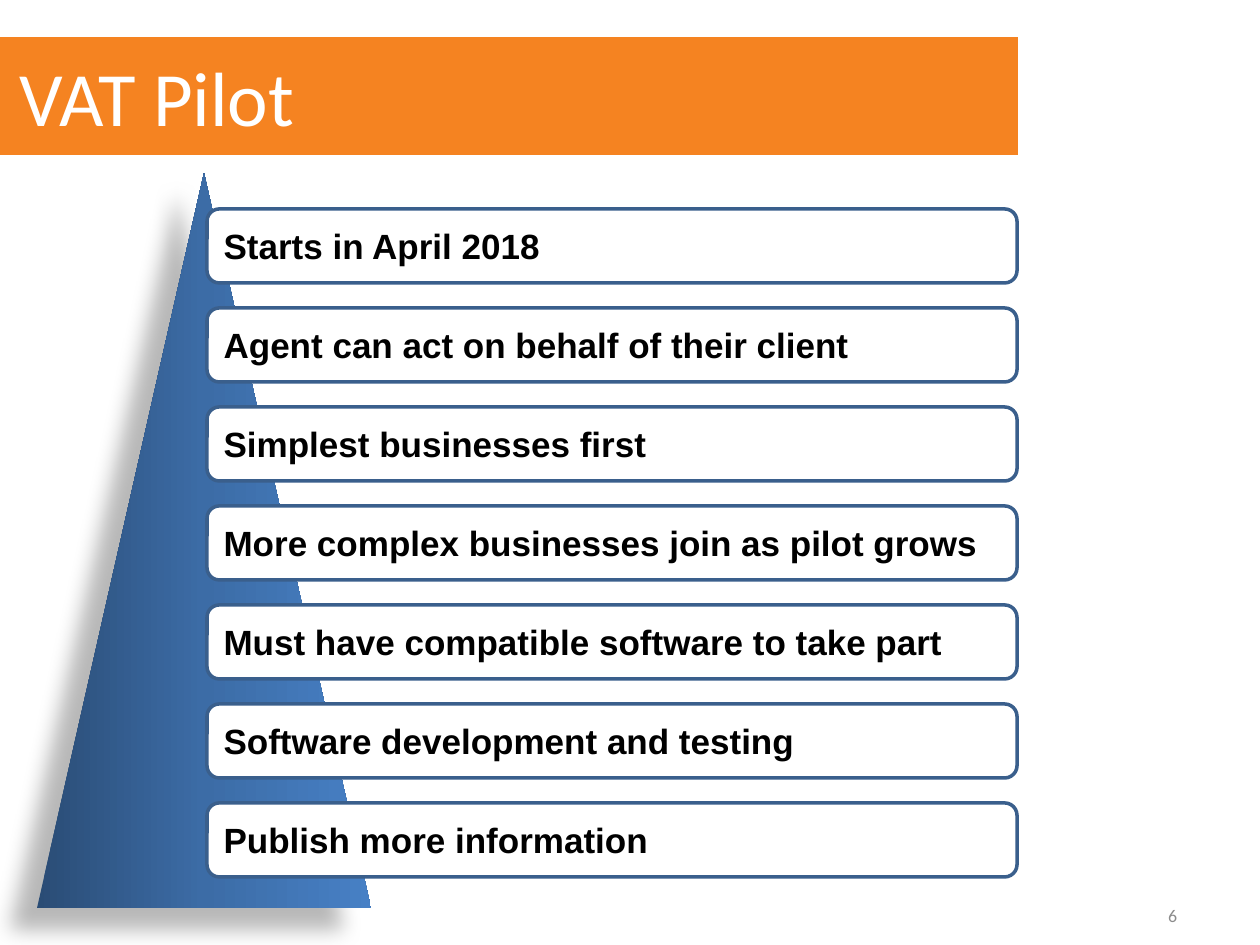
from pptx import Presentation
from pptx.dml.color import RGBColor
from pptx.enum.shapes import MSO_SHAPE
from pptx.enum.text import MSO_ANCHOR, PP_ALIGN
from pptx.oxml import parse_xml
from pptx.oxml.ns import nsdecls
from pptx.util import Emu, Pt

TRIANGLE, ROUNDED = MSO_SHAPE.ISOSCELES_TRIANGLE, MSO_SHAPE.ROUNDED_RECTANGLE
MIDDLE = MSO_ANCHOR.MIDDLE
LEFT, RIGHT = PP_ALIGN.LEFT, PP_ALIGN.RIGHT

ORANGE = RGBColor(0xF5, 0x83, 0x21)
WHITE = RGBColor(0xFF, 0xFF, 0xFF)
BLACK = RGBColor(0, 0, 0)
GREY = RGBColor(0x8C, 0x8C, 0x8C)
OUTLINE = RGBColor(0x3A, 0x5F, 0x8C)
GRADIENT = [
    (0, RGBColor(0x2A, 0x4C, 0x75)),
    (50, RGBColor(0x3C, 0x6C, 0xA6)),
    (100, RGBColor(0x47, 0x80, 0xC5)),
]

TITLE_FONT = {"name": "Calibri", "size": Pt(43.9), "bold": False}
POINT_FONT = {"name": "Arial", "size": Pt(20), "bold": True}
NUMBER_FONT = {"name": "Calibri", "size": Pt(10.2)}
WIDE_INSETS = (20, 10, 20, 10)
POINT_INSETS = (13, 6, 13, 6)

POINTS = [
    "Starts in April 2018",
    "Agent can act on behalf of their client",
    "Simplest businesses first",
    "More complex businesses join as pilot grows",
    "Must have compatible software to take part",
    "Software development and testing",
    "Publish more information",
]
POINT_TOP, POINT_PITCH = 209, 99


def px(n):
    return Emu(round(n * 914400 / 126))


def box(*lengths):
    return [px(n) for n in lengths]


def write(sp, text, font, color, align, insets):
    tf = sp.text_frame
    frame = dict(zip(("margin_left", "margin_top", "margin_right", "margin_bottom"), box(*insets)))
    frame.update(word_wrap=True, vertical_anchor=MIDDLE)
    for key, value in frame.items():
        setattr(tf, key, value)
    p = tf.paragraphs[0]
    p.alignment = align
    r = p.add_run()
    r.text = text
    for key, value in font.items():
        setattr(r.font, key, value)
    r.font.color.rgb = color


def add_title(s, text):
    sp = s.shapes.title
    sp.left, sp.top, sp.width, sp.height = box(0, 37, 1018, 118)
    sp.fill.solid()
    sp.fill.fore_color.rgb = ORANGE
    write(sp, text, TITLE_FONT, WHITE, LEFT, WIDE_INSETS)


def add_pyramid(s):
    sp = s.shapes.add_shape(TRIANGLE, *box(37, 173, 334, 735))
    stops = "".join(
        f'<a:gs pos="{pos * 1000}"><a:srgbClr val="{color}"/></a:gs>' for pos, color in GRADIENT
    )
    sp_pr = sp._element.spPr
    sp_pr.append(parse_xml(
        f'<a:gradFill {nsdecls("a")} rotWithShape="1"><a:gsLst>{stops}</a:gsLst>'
        '<a:lin ang="0" scaled="0"/></a:gradFill>'
    ))
    sp.line.fill.background()
    sp.shadow.inherit = False
    sp_pr.find("{*}effectLst").append(parse_xml(
        f'<a:outerShdw {nsdecls("a")} blurRad="{Pt(11.8)}" dist="{Pt(19.7)}" '
        f'dir="{141 * 60000}" rotWithShape="0">'
        f'<a:srgbClr val="{BLACK}"><a:alpha val="28000"/></a:srgbClr></a:outerShdw>'
    ))


def add_point(s, top, text):
    sp = s.shapes.add_shape(ROUNDED, *box(207, top, 810, 74))
    sp.shadow.inherit = False
    sp.fill.solid()
    sp.fill.fore_color.rgb = WHITE
    sp.line.color.rgb = OUTLINE
    sp.line.width = Pt(2)
    write(sp, text, POINT_FONT, BLACK, LEFT, POINT_INSETS)


def add_page_number(s, text):
    sp = s.shapes.add_textbox(*box(903, 890, 294, 50))
    write(sp, text, NUMBER_FONT, GREY, RIGHT, WIDE_INSETS)


def main():
    prs = Presentation()
    prs.slide_width, prs.slide_height = box(1260, 945)
    s = prs.slides.add_slide(prs.slide_layouts[5])
    add_page_number(s, "6")
    add_title(s, "VAT Pilot")
    add_pyramid(s)
    for i, text in enumerate(POINTS):
        add_point(s, POINT_TOP + i * POINT_PITCH, text)
    prs.save("out.pptx")


if __name__ == "__main__":
    main()
